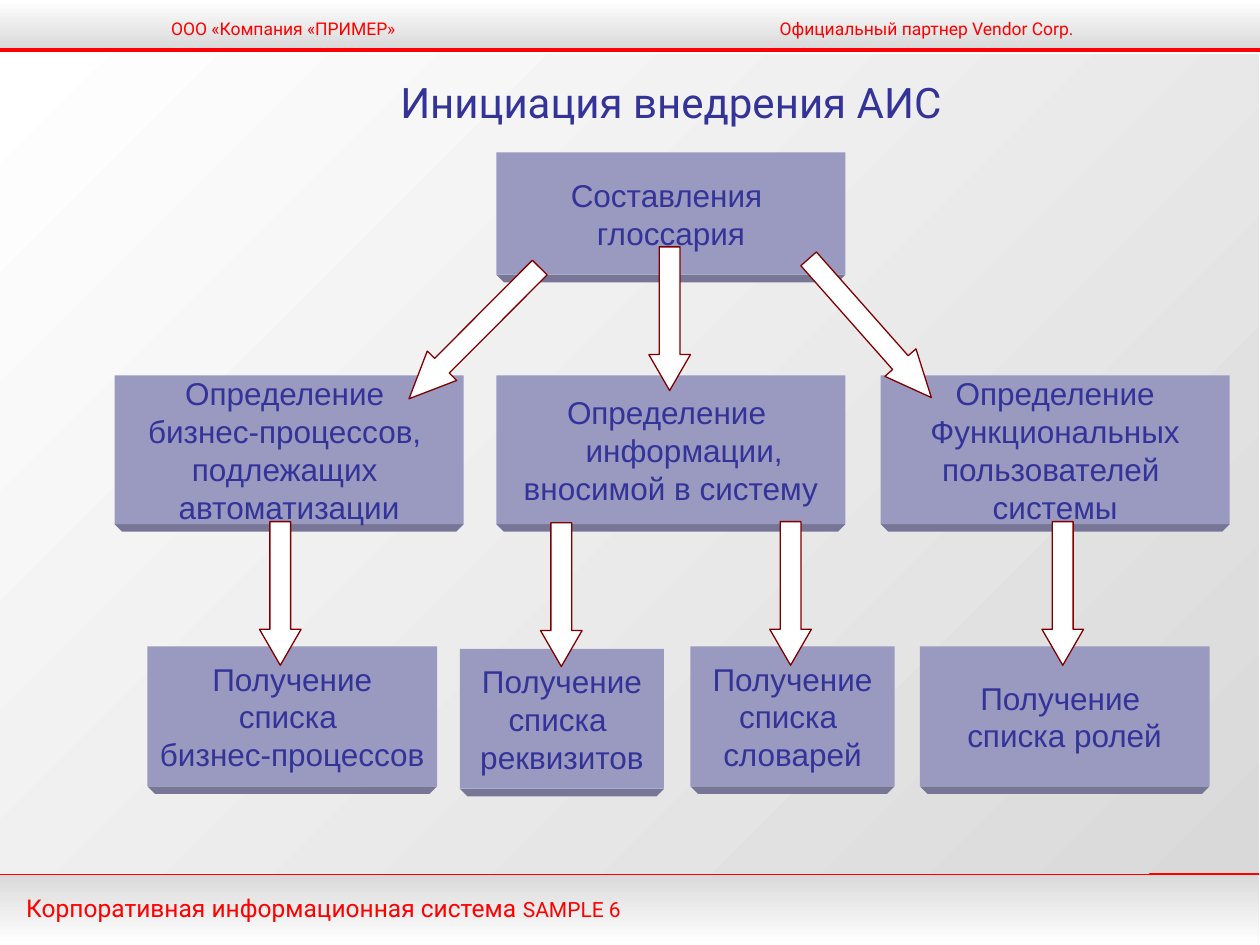
import pptx
import pptx.util
import pptx.dml.color
import pptx.enum.shapes
import pptx.enum.text
from lxml import etree

RGB = pptx.dml.color.RGBColor
RED = RGB(0xFF, 0x00, 0x00)
GREY = RGB(0xD9, 0xD9, 0xD9)
WHITE = RGB(0xFF, 0xFF, 0xFF)
INDIGO = RGB(0x33, 0x33, 0x99)
LILAC = RGB(0x9A, 0x99, 0xC0)
EDGE = RGB(0x78, 0x76, 0x96)
MAROON = RGB(0x80, 0x00, 0x00)

SHAPE = pptx.enum.shapes.MSO_SHAPE
ALIGN = pptx.enum.text.PP_ALIGN
MIDDLE = pptx.enum.text.MSO_ANCHOR.MIDDLE
A = "{http://schemas.openxmlformats.org/drawingml/2006/main}"

prs = pptx.Presentation()
prs.slide_width = pptx.util.Inches(10)
prs.slide_height = pptx.util.Inches(7.5)
U = prs.slide_width / 100  # grid of 100 columns by 75 rows
s = prs.slides.add_slide(prs.slide_layouts[5])


def grid(*cells):
    return [round(c * U) for c in cells]


def add_run(p, text, size, font, color):
    r = p.add_run()
    r.text = text
    r.font.size = pptx.util.Pt(size)
    r.font.name = font
    r.font.color.rgb = color


# Header and footer bands, red rules, page background
bands = [
    (0, 69.3, 99.9, 5.7, 0, 270),
    (0, 0, 100, 3.9, 180, 270),
    (0, 4.3, 99.9, 65, 180, 315),
]
for i, (x, y, w, h, turn, angle) in enumerate(bands):
    if i == 2:  # the rules lie under the page background
        for rule_y, rule_w in [(4, 100), (69.3, 99.9)]:
            line = s.shapes.add_connector(
                pptx.enum.shapes.MSO_CONNECTOR.STRAIGHT,
                *grid(0, rule_y, rule_w, rule_y))
            line.line.color.rgb = RED
            line.line.width = pptx.util.Pt(2.25)
            etree.SubElement(line._element.spPr, A + "effectLst")
    sp = s.shapes.add_shape(SHAPE.RECTANGLE, *grid(x, y, w, h))
    sp.shadow.inherit = False
    sp.rotation = turn
    sp.line.fill.background()
    sp.fill.gradient()
    sp.fill.gradient_angle = angle
    for stop, color in zip(sp.fill.gradient_stops, (GREY, WHITE)):
        stop.color.rgb = color

# Header text, second part on a tab stop
tf = s.shapes.add_textbox(*grid(12.6, 0.9, 75.5, 2.7)).text_frame
tf.word_wrap = True
p = tf.paragraphs[0]
tabs = etree.SubElement(p._p.get_or_add_pPr(), A + "tabLst")
etree.SubElement(tabs, A + "tab", pos=str(round(48.3 * U)), algn="l")
add_run(p, "ООО «Компания «ПРИМЕР»\tОфициальный партнер Vendor Corp.",
        10, "Roboto", RED)

# Boxes: left, top, width, height, lines
boxes = [
    (9.1, 29.8, 27.7, 11.8, ["Определение ", "бизнес-процессов, ",
                             "подлежащих ", "автоматизации"]),
    (39.4, 29.8, 27.7, 11.8, ["Определение ", "информации, ",
                              "вносимой в систему"]),
    (69.9, 29.8, 27.7, 11.8, ["Определение", "Функциональных",
                              "пользователей ", "системы"]),
    (11.7, 51.3, 23, 11.1, ["Получение", "списка ", "бизнес-процессов"]),
    (54.8, 51.3, 16.2, 11.1, ["Получение", "списка ", "словарей"]),
    (73, 51.3, 23, 11.1, ["Получение ", "списка ролей"]),
    (36.5, 51.5, 16.2, 11.1, ["Получение", "списка ", "реквизитов"]),
    (39.4, 12.1, 27.7, 9.7, ["Составления ", "глоссария"]),
]
for x, y, w, h, lines in boxes:
    lip = s.shapes.add_shape(SHAPE.TRAPEZOID, *grid(x, y + h, w, 0.6))
    lip.rotation = 180
    lip.adjustments[0] = 1
    lip.fill.solid()
    lip.fill.fore_color.rgb = EDGE
    sp = s.shapes.add_shape(SHAPE.RECTANGLE, *grid(x, y, w, h))
    sp.fill.solid()
    sp.fill.fore_color.rgb = LILAC
    for part in (lip, sp):
        part.shadow.inherit = False
        part.line.fill.background()
    tf = sp.text_frame
    tf.word_wrap = False
    tf.vertical_anchor = MIDDLE
    for i, text in enumerate(lines):
        p = tf.add_paragraph() if i else tf.paragraphs[0]
        p.alignment = ALIGN.CENTER
        if text == "информации, ":
            p._p.get_or_add_pPr().set("marL", str(round(2.8 * U)))
        add_run(p, text, 18, "Arial", INDIGO)

# Arrows: left, top, height, rotation, head length
arrows = [(x, y, 11.4, 0, 0.865) for x, y in
          [(51.5, 19.6), (20.6, 41.4), (61.1, 41.4), (82.7, 41.4), (42.9, 41.5)]]
arrows += [(67.4, 18.7, 14.7, 318.5, 1.122), (36, 19.1, 14.7, 44.9, 1.122)]
for x, y, h, turn, head in arrows:
    sp = s.shapes.add_shape(SHAPE.DOWN_ARROW, *grid(x, y, 3.3, h))
    sp.shadow.inherit = False
    sp.rotation = turn
    sp.adjustments[0] = 0.5
    sp.adjustments[1] = head
    sp.fill.solid()
    sp.fill.fore_color.rgb = WHITE
    sp.line.color.rgb = MAROON
    sp.line.width = pptx.util.Pt(0.75)

# Title, brought in front of the background
title = s.shapes.title
title.left, title.top, title.width, title.height = grid(7.8, 5.5, 90.9, 5.1)
s.shapes._spTree.append(title._element)
tf = title.text_frame
tf.word_wrap = True
tf.auto_size = pptx.enum.text.MSO_AUTO_SIZE.NONE
tf.vertical_anchor = MIDDLE
p = tf.paragraphs[0]
p.alignment = ALIGN.CENTER
add_run(p, "Инициация внедрения АИС", 24, "Roboto", INDIGO)

# Footer text
tf = s.shapes.add_textbox(*grid(1.1, 70.4, 83, 3.3)).text_frame
tf.word_wrap = True
p = tf.paragraphs[0]
add_run(p, "Корпоративная информационная система ", 14, "Roboto", RED)
add_run(p, "SAMPLE 6", 12, "Roboto", RED)

prs.save("out.pptx")
